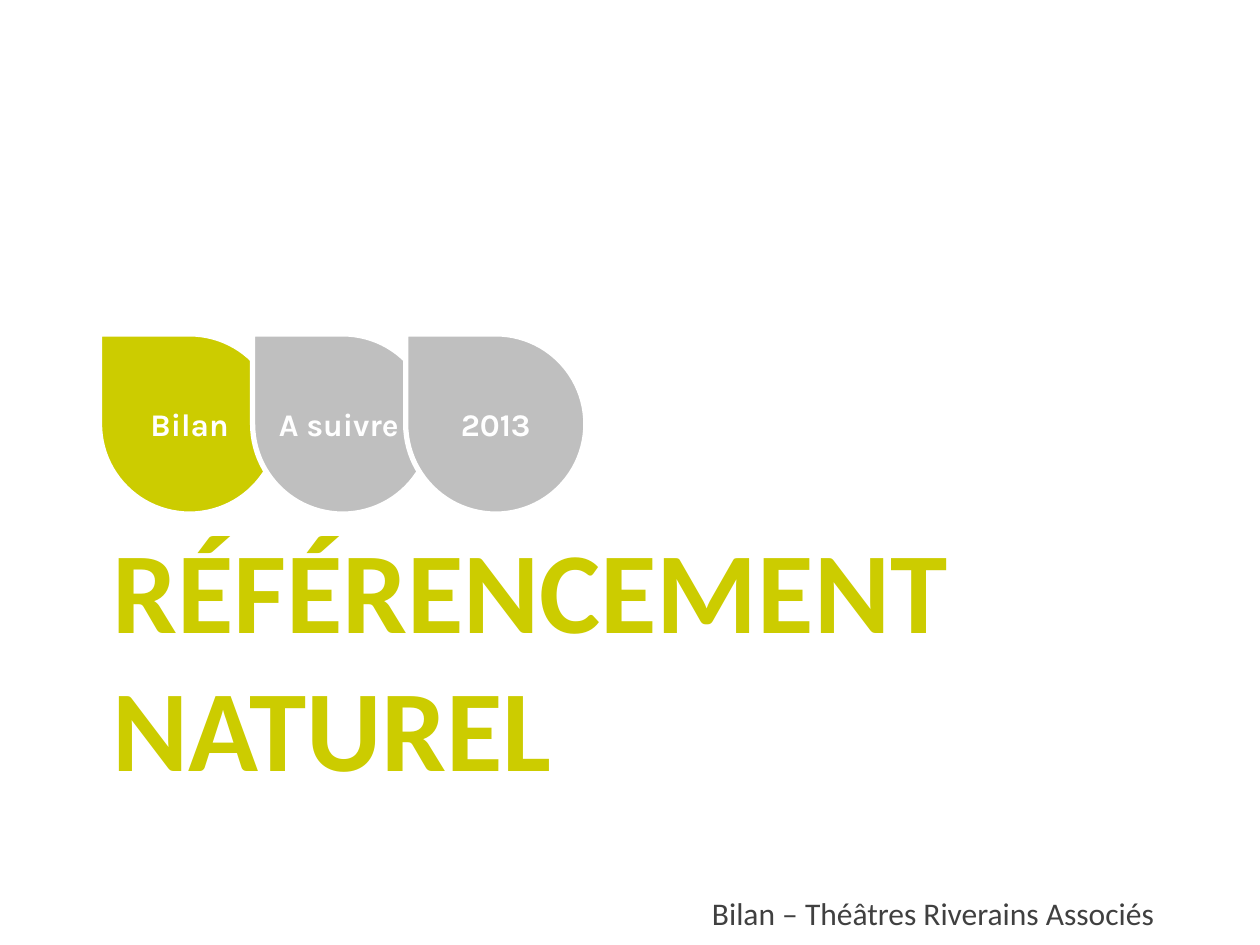
from pptx import Presentation, util as u
from pptx.dml.color import RGBColor
from pptx.enum import shapes, text

LIME = RGBColor(0xCC, 0xCC, 0x00)
SILVER = RGBColor(0xBF, 0xBF, 0xBF)
CHARCOAL = RGBColor(0x40, 0x40, 0x40)
WHITE = RGBColor(0xFF, 0xFF, 0xFF)
LEFT = 0.79
STEPS = ["Bilan", "A suivre", "2013"]


def inches(*lengths):
    return [u.Inches(n) for n in lengths]


def place(sp, box):
    sp.left, sp.top, sp.width, sp.height = inches(*box)


def write(sp, words, size=18, font="Calibri", color=CHARCOAL, bold=False,
          align=text.PP_ALIGN.LEFT, anchor=text.MSO_ANCHOR.MIDDLE):
    tf = sp.text_frame
    tf.word_wrap = True
    tf.auto_size = text.MSO_AUTO_SIZE.NONE
    tf.vertical_anchor = anchor
    p = tf.paragraphs[0]
    p.alignment = align
    r = p.add_run()
    r.text = words
    r.font.size, r.font.name, r.font.bold = u.Pt(size), font, bold
    r.font.color.rgb = color
    return tf


def add_title(s, box):
    sp = s.shapes.title
    place(sp, box)
    write(sp, "RÉFÉRENCEMENT NATUREL", size=66, color=LIME, bold=True,
          anchor=text.MSO_ANCHOR.TOP)


def add_footer(s, box):
    sp = s.shapes.add_textbox(*inches(*box))
    write(sp, "Bilan – Théâtres Riverains Associés", align=text.PP_ALIGN.RIGHT)


def add_steps(s, box, active=0):
    """Overlapping drops spread over the box, the active one in lime."""
    left, top, width, size = box
    pitch = (width - size) / (len(STEPS) - 1)
    group = s.shapes.add_group_shape()
    for i, label in enumerate(STEPS):
        sp = group.shapes.add_shape(shapes.MSO_SHAPE.TEAR,
                                    *inches(left + i * pitch, top, size, size))
        sp.rotation = 270
        sp.shadow.inherit = False
        sp.fill.solid()
        sp.fill.fore_color.rgb = LIME if i == active else SILVER
        sp.line.color.rgb = WHITE
        sp.line.width = u.Pt(3)
        # The second label is nearly as wide as its drop, so it starts at the edge
        align = text.PP_ALIGN.LEFT if i == 1 else text.PP_ALIGN.CENTER
        tf = write(sp, label, font="Karla", color=WHITE, bold=True, align=align)
        tf.margin_left = tf.margin_right = tf.margin_top = tf.margin_bottom = 0
        # Vertical text cancels the rotation of the drop
        sp._element.txBody.bodyPr.set("vert", "vert")


def main():
    prs = Presentation()
    prs.slide_width, prs.slide_height = inches(10, 7.5)
    s = prs.slides.add_slide(prs.slide_layouts.get_by_name("Title Only"))
    add_title(s, (LEFT, 4.06, 8.5, 2.24))
    add_footer(s, (3.42, 6.99, 5.84, 0.51))
    add_steps(s, (LEFT, 2.65, 3.86, 1.43))
    prs.save("out.pptx")


if __name__ == "__main__":
    main()
